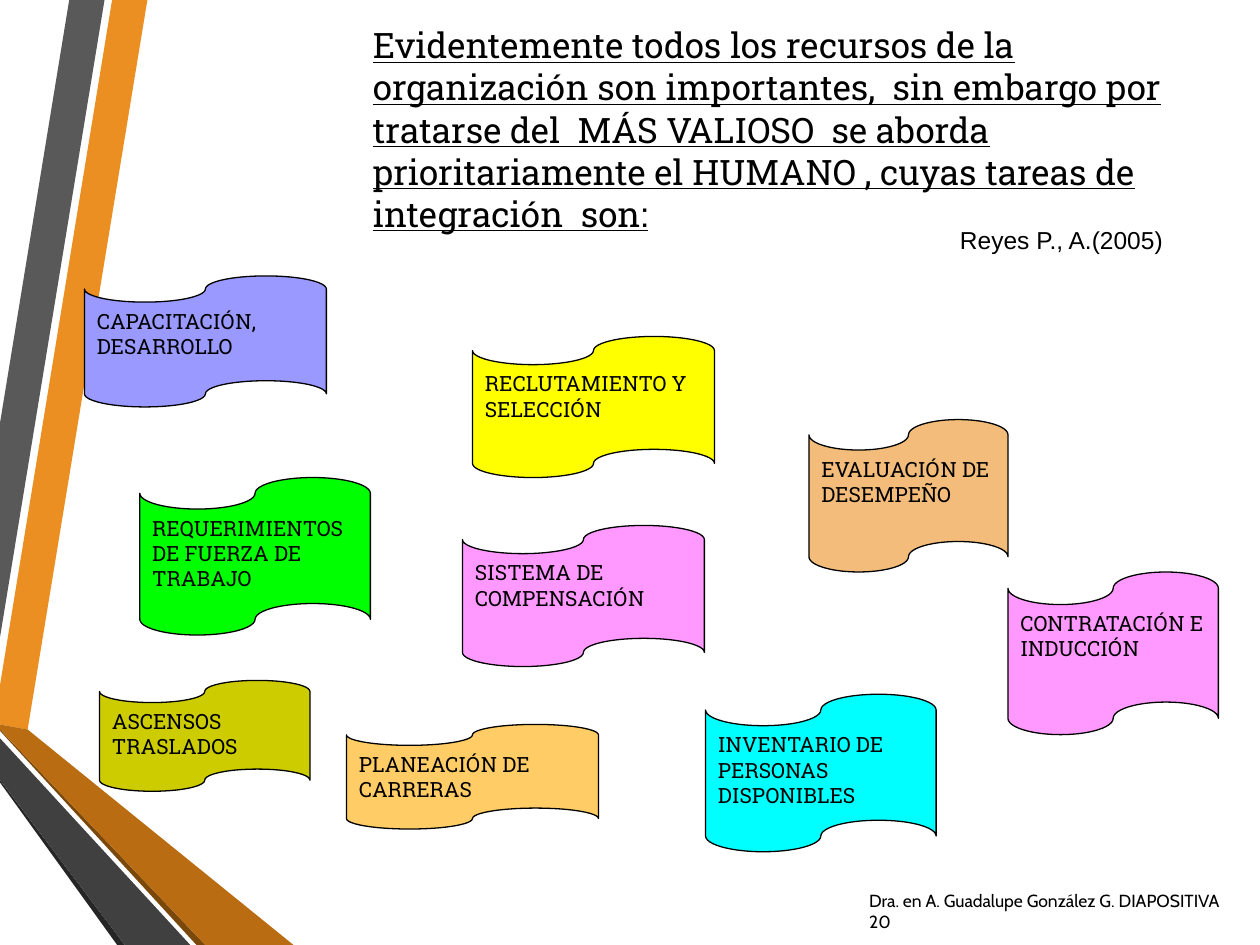
from pptx import Presentation
from pptx.dml.color import RGBColor
from pptx.enum.shapes import MSO_SHAPE
from pptx.enum.text import MSO_ANCHOR, MSO_AUTO_SIZE, PP_ALIGN
from pptx.util import Inches, Pt

BLACK = RGBColor(0x00, 0x00, 0x00)
ORANGE = RGBColor(0xEB, 0x8F, 0x22)
DARK_ORANGE = RGBColor(0xB9, 0x6C, 0x11)
BROWN = RGBColor(0x7B, 0x48, 0x0B)
GREY = RGBColor(0x59, 0x59, 0x59)
DARK_GREY = RGBColor(0x40, 0x40, 0x40)
CHARCOAL = RGBColor(0x26, 0x26, 0x26)
GREEN = RGBColor(0x00, 0xFF, 0x00)
CYAN = RGBColor(0x00, 0xFF, 0xFF)
PINK = RGBColor(0xFF, 0x99, 0xFF)
OLIVE = RGBColor(0xCC, 0xCC, 0x00)
YELLOW = RGBColor(0xFF, 0xFF, 0x00)
PEACH = RGBColor(0xF3, 0xBC, 0x7A)
LAVENDER = RGBColor(0x99, 0x99, 0xFF)
GOLD = RGBColor(0xFF, 0xCC, 0x66)


def write_lines(frame, lines, font_name, size, underline=None):
    for i, line in enumerate(lines):
        paragraph = frame.paragraphs[0] if i == 0 else frame.add_paragraph()
        paragraph.alignment = PP_ALIGN.LEFT
        run = paragraph.add_run()
        run.text = line
        run.font.name = font_name
        run.font.size = Pt(size)
        run.font.color.rgb = BLACK
        run.font.underline = underline


def place(shape, left, top, width, height):
    shape.left, shape.top = Inches(left), Inches(top)
    shape.width, shape.height = Inches(width), Inches(height)


prs = Presentation()
prs.slide_width, prs.slide_height = Inches(10), Inches(7.5)
slide = prs.slides.add_slide(prs.slide_layouts[5])

# Folded ribbons along the left edge
ribbons = [
    (ORANGE, [(0, 5.44), (0, 5.75), (0.22, 5.79), (1.17, 0), (0.89, 0)]),
    (GREY, [(0.83, 0), (0.55, 0), (0, 3.36), (0, 5.06)]),
    (CHARCOAL, [(0, 6.19), (0, 6.21), (0.93, 7.5), (0.99, 7.5)]),
    (BROWN, [(0, 5.79), (0, 5.8), (1.56, 7.5), (1.63, 7.5)]),
    (DARK_ORANGE, [(0, 5.79), (1.63, 7.5), (2.33, 7.5), (0.22, 5.79), (0, 5.75)]),
    (DARK_GREY, [(0, 6.19), (0.99, 7.5), (1.51, 7.5), (0, 5.86)]),
]
for color, corners in ribbons:
    points = [(Inches(x), Inches(y)) for x, y in corners]
    builder = slide.shapes.build_freeform(*points[0])
    builder.add_line_segments(points[1:], close=True)
    ribbon = builder.convert_to_shape()
    ribbon.shadow.inherit = False
    ribbon.fill.solid()
    ribbon.fill.fore_color.rgb = color
    ribbon.line.fill.background()

# Integration tasks
tasks = [
    (1.11, 3.79, 1.83, 1.25, GREEN, ["REQUERIMIENTOS DE FUERZA DE TRABAJO"]),
    (5.6, 5.51, 1.83, 1.25, CYAN, ["INVENTARIO DE PERSONAS DISPONIBLES"]),
    (8, 4.54, 1.67, 1.29, PINK, ["CONTRATACIÓN E INDUCCIÓN"]),
    (0.79, 5.4, 1.67, 0.88, OLIVE, ["ASCENSOS", "TRASLADOS"]),
    (3.75, 2.67, 1.92, 1.12, YELLOW, ["RECLUTAMIENTO Y SELECCIÓN"]),
    (6.42, 3.33, 1.58, 1.21, PEACH, ["EVALUACIÓN DE DESEMPEÑO"]),
    (0.67, 2.19, 1.92, 1.04, LAVENDER, ["CAPACITACIÓN, DESARROLLO"]),
    (3.67, 4.17, 1.92, 1.12, PINK, ["SISTEMA DE COMPENSACIÓN"]),
    (2.75, 5.75, 2, 0.83, GOLD, ["PLANEACIÓN DE CARRERAS"]),
]
for left, top, width, height, color, lines in tasks:
    task = slide.shapes.add_shape(
        MSO_SHAPE.FLOWCHART_PUNCHED_TAPE,
        Inches(left), Inches(top), Inches(width), Inches(height))
    task.shadow.inherit = False
    task.fill.solid()
    task.fill.fore_color.rgb = color
    task.line.color.rgb = BLACK
    task.line.width = Pt(0.75)
    task.text_frame.word_wrap = True
    task.text_frame.vertical_anchor = MSO_ANCHOR.TOP
    write_lines(task.text_frame, lines, "Roboto Slab", 12)

# Title
title = slide.shapes.title
place(title, 2.86, 0.14, 7, 1.78)
title.text_frame.word_wrap = True
title.text_frame.auto_size = MSO_AUTO_SIZE.NONE
title.text_frame.vertical_anchor = MSO_ANCHOR.TOP
write_lines(
    title.text_frame,
    ["Evidentemente todos los recursos de la organización son importantes,  "
     "sin embargo por tratarse del  MÁS VALIOSO  se aborda prioritariamente "
     "el HUMANO , cuyas tareas de integración  son:"],
    "Roboto Slab", 20, underline=True)

# Author and slide footer
footer = slide.shapes.add_textbox(Inches(6.8), Inches(6.97), Inches(3.17), Inches(0.52))
footer.text_frame.word_wrap = True
footer.text_frame.vertical_anchor = MSO_ANCHOR.MIDDLE
write_lines(footer.text_frame,
            ["Dra. en A. Guadalupe González G. DIAPOSITIVA  20"], "Cabin", 10)

# Citation
citation = slide.shapes.add_textbox(Inches(7.52), Inches(1.74), Inches(1.88), Inches(0.34))
citation.text_frame.word_wrap = False
write_lines(citation.text_frame, ["Reyes P., A.(2005)"], "Arial", 14)

prs.save("out.pptx")
